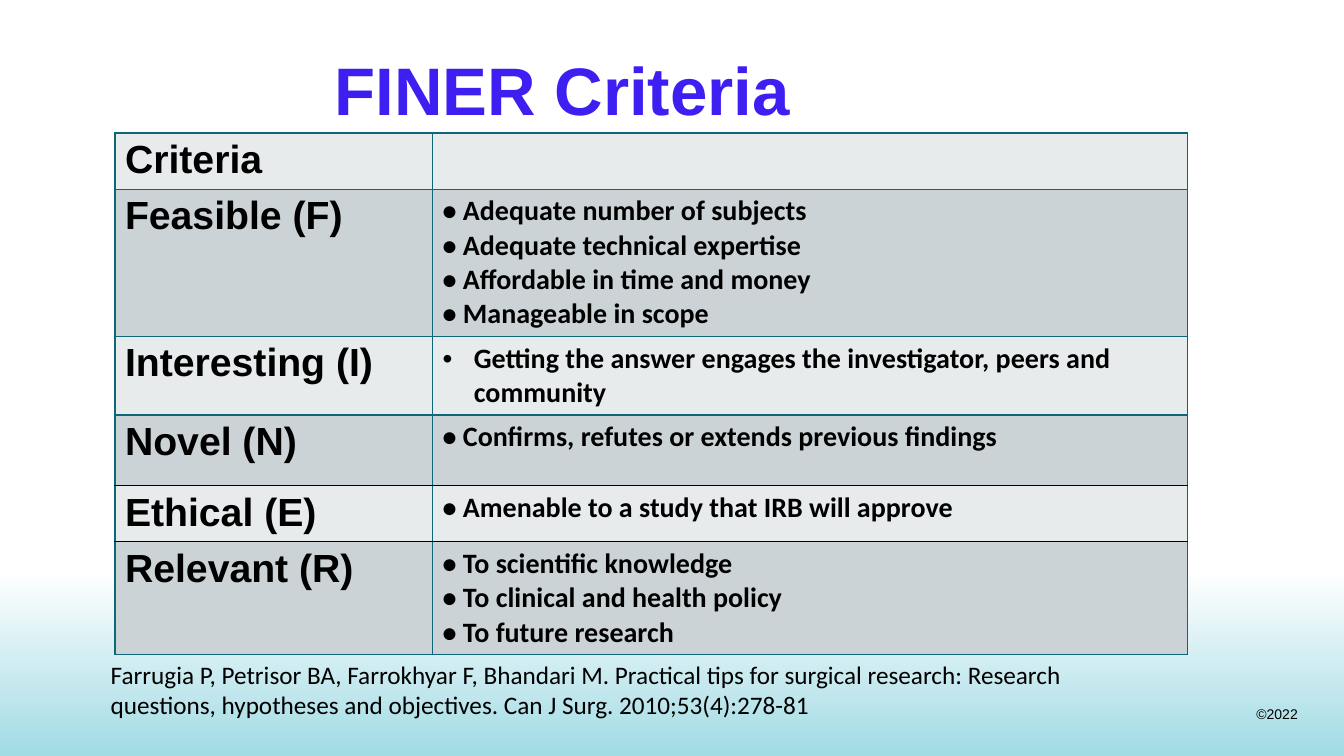
import pptx
import pptx.util
import pptx.dml.color
import pptx.enum.shapes
import pptx.enum.text
import pptx.oxml
import pptx.oxml.ns

Inches = pptx.util.Inches
Pt = pptx.util.Pt

# Content
TITLE = "FINER Criteria"
CRITERIA = [  # name, row height, lines
    ("Criteria", 0.53, []),
    ("Feasible (F)", 1.46, ["• Adequate number of subjects", "• Adequate technical expertise",
                            "• Affordable in time and money", "• Manageable in scope"]),
    ("Interesting (I)", 0.78,
     ["Getting the answer engages the investigator, peers and community"]),
    ("Novel (N)", 0.70, ["• Confirms, refutes or extends previous findings"]),
    ("Ethical (E)", 0.54, ["• Amenable to a study that IRB will approve"]),
    ("Relevant (R)", 1.12, ["• To scientific knowledge", "• To clinical and health policy",
                            "• To future research"]),
]
HANGING_ROW = 2
BLACK_RULES = (4, 5)  # rules counted from the top edge of the table
COLUMN_WIDTHS = (3.15, 7.49)
CITATION = ("Farrugia P, Petrisor BA, Farrokhyar F, Bhandari M. Practical tips for surgical "
            "research: Research questions, hypotheses and objectives. "
            "Can J Surg. 2010;53(4):278-81")
COPYRIGHT = "©2022"
COLORS = {"white": "FFFFFF", "aqua": "A1DBE4", "title": "3D1FF1", "text": "000000",
          "border": "0E6779", "light": "E7EBEC", "dark": "CCD3D7"}


def rgb(name):
    return pptx.dml.color.RGBColor.from_string(COLORS[name])


def style(para, size, font, color="text", bold=False):
    para.font.size = Pt(size)
    para.font.name = font
    para.font.bold = bold
    para.font.color.rgb = rgb(color)


def add_text(page, text, place, size, font, wrap=True, **look):
    box = page.shapes.add_textbox(*(Inches(length) for length in place))
    box.text_frame.word_wrap = wrap
    para = box.text_frame.paragraphs[0]
    para.text = text
    style(para, size, font, **look)
    return box.text_frame


def add_borders(cell, row):
    top, bottom = ("text" if rule in BLACK_RULES else "border" for rule in (row, row + 1))
    for side, color in (("L", "border"), ("R", "border"), ("T", top), ("B", bottom)):
        cell._tc.get_or_add_tcPr().append(pptx.oxml.parse_xml(
            f'<a:ln{side} {pptx.oxml.ns.nsdecls("a")} w="{Pt(1)}"><a:solidFill>'
            f'<a:srgbClr val="{COLORS[color]}"/></a:solidFill></a:ln{side}>'))


def add_bullet(para):
    properties = para._p.get_or_add_pPr()
    properties.set("marL", str(Inches(0.31)))
    properties.set("indent", str(-Inches(0.31)))
    for tag in ('buFont typeface="Arial"', 'buChar char="•"'):
        bullet = pptx.oxml.parse_xml(f'<a:{tag} {pptx.oxml.ns.nsdecls("a")}/>')
        properties.insert_element_before(bullet, "a:tabLst", "a:defRPr", "a:extLst")


def fill_cell(cell, row, lines, size, font):
    add_borders(cell, row)
    cell.fill.solid()
    cell.fill.fore_color.rgb = rgb("dark" if row % 2 else "light")
    cell.margin_bottom = Inches(0.04)
    cell.text = "\n".join(lines)
    for para in cell.text_frame.paragraphs:
        style(para, size, font, bold=True)


deck = pptx.Presentation()
deck.slide_width, deck.slide_height = Inches(13.33), Inches(7.5)
page = deck.slides.add_slide(deck.slide_layouts[6])

# Shaded band along the foot
band = page.shapes.add_shape(pptx.enum.shapes.MSO_SHAPE.RECTANGLE,
                             0, Inches(5.67), Inches(13.33), Inches(1.83))
band.shadow.inherit = False
band.line.fill.background()
band.fill.gradient()
band.fill.gradient_angle = 270
for stop, position, color in zip(band.fill.gradient_stops, (0, 1), ("white", "aqua")):
    stop.position = position
    stop.color.rgb = rgb(color)

# Copyright and title
mark = add_text(page, COPYRIGHT, (12.36, 6.95, 0.61, 0.27), 10, "Arial", wrap=False)
mark.paragraphs[0].alignment = pptx.enum.text.PP_ALIGN.RIGHT
heading = add_text(page, TITLE, (3.22, 0.37, 6.1, 0.72), 48, "Arial", color="title", bold=True)
heading.margin_top = Inches(0.11)

# Criteria table
table = page.shapes.add_table(len(CRITERIA), len(COLUMN_WIDTHS), Inches(1.14), Inches(1.32),
                              Inches(sum(COLUMN_WIDTHS)), Inches(5.13)).table
table.first_row = table.horz_banding = False
for column, width in zip(table.columns, COLUMN_WIDTHS):
    column.width = Inches(width)
for row, (name, height, lines) in enumerate(CRITERIA):
    table.rows[row].height = Inches(height)
    fill_cell(table.cell(row, 0), row, [name], 28, "Arial")
    fill_cell(table.cell(row, 1), row, lines, 20, "Calibri")
add_bullet(table.cell(HANGING_ROW, 1).text_frame.paragraphs[0])

# Citation
add_text(page, CITATION, (1, 6.49, 9.8, 0.71), 18, "Calibri")

deck.save("out.pptx")
